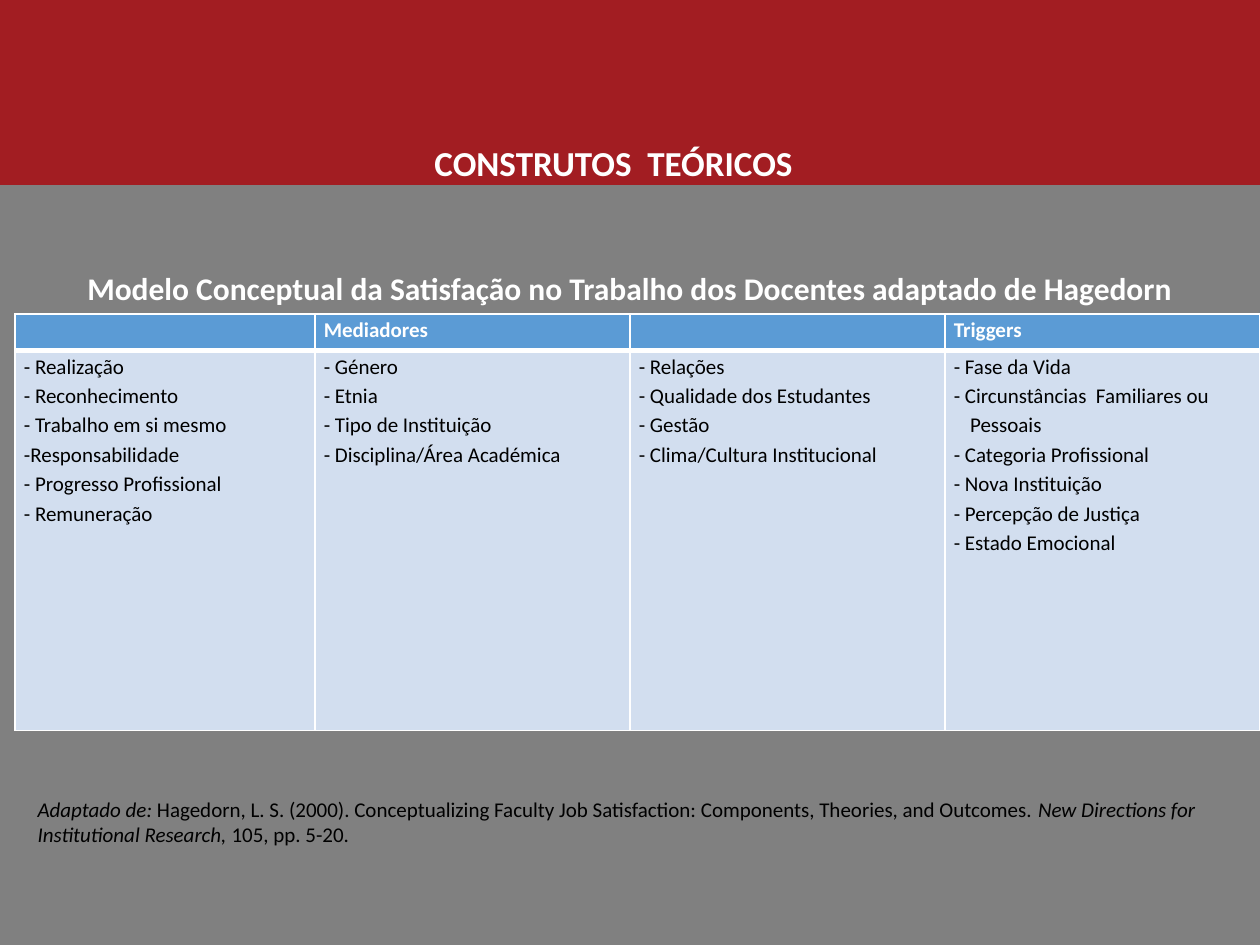
from lxml import etree
from pptx import Presentation
from pptx.dml.color import RGBColor
from pptx.enum.shapes import MSO_SHAPE
from pptx.enum.text import MSO_ANCHOR, PP_ALIGN
from pptx.oxml.ns import qn
from pptx.util import Inches, Pt

COLORS = {
    "red": "A21D22",
    "gray": "808080",
    "header": "5B9BD5",
    "body": "D2DEEF",
    "white": "FFFFFF",
    "black": "000000",
}


def style_font(font, size, color, bold=False, italic=False):
    font.name = "Calibri"
    font.size = Pt(size)
    font.bold = bold
    font.italic = italic
    font.color.rgb = RGBColor.from_string(COLORS[color])


def set_borders(cell, widths):
    properties = cell._tc.get_or_add_tcPr()
    for index, (side, width) in enumerate(widths.items()):
        line = etree.Element(qn(f"a:ln{side}"), w=str(Pt(width)))
        fill = etree.SubElement(line, qn("a:solidFill"))
        etree.SubElement(fill, qn("a:srgbClr"), val=COLORS["white"])
        properties.insert(index, line)


presentation = Presentation()
presentation.slide_width = Inches(10)
presentation.slide_height = Inches(7.5)
slide = presentation.slides.add_slide(presentation.slide_layouts[6])

bands = [(0, 1.47, "red"), (1.47, 5.67, "gray"), (7.06, 0.44, "gray")]
for top, height, color in bands:
    band = slide.shapes.add_shape(
        MSO_SHAPE.RECTANGLE, 0, Inches(top), Inches(10), Inches(height)
    )
    band.shadow.inherit = False
    band.fill.solid()
    band.fill.fore_color.rgb = RGBColor.from_string(COLORS[color])
    band.line.fill.background()

columns = [
    ("", 2.38, ["- Realização", "- Reconhecimento", "- Trabalho em si mesmo",
                "-Responsabilidade", "- Progresso Profissional", "- Remuneração"]),
    ("Mediadores", 2.5, ["- Género", "- Etnia", "- Tipo de Instituição",
                         "- Disciplina/Área Académica"]),
    ("", 2.5, ["- Relações", "- Qualidade dos Estudantes", "- Gestão",
               "- Clima/Cultura Institucional"]),
    ("Triggers", 2.5, ["- Fase da Vida", "- Circunstâncias  Familiares ou Pessoais",
                       "- Categoria Profissional", "- Nova Instituição",
                       "- Percepção de Justiça", "- Estado Emocional"]),
]
table = slide.shapes.add_table(
    2, len(columns), Inches(0.12), Inches(2.49), Inches(9.88), Inches(3.31)
).table
table.rows[0].height = Inches(0.29)
table.rows[1].height = Inches(3.02)

for column_index, (heading, width, items) in enumerate(columns):
    table.columns[column_index].width = Inches(width)
    for row_index, text in enumerate([heading, "\n".join(items)]):
        is_header = row_index == 0
        cell = table.cell(row_index, column_index)
        cell.margin_left = cell.margin_right = Inches(0.07)
        cell.margin_top = cell.margin_bottom = 0
        cell.fill.solid()
        cell.fill.fore_color.rgb = RGBColor.from_string(
            COLORS["header" if is_header else "body"]
        )
        set_borders(cell, {"L": 1, "R": 1, "T": 1 if is_header else 3,
                           "B": 3 if is_header else 1})
        cell.text_frame.text = text
        for paragraph in cell.text_frame.paragraphs:
            paragraph.line_spacing = 1.15
            if is_header:
                paragraph.alignment = PP_ALIGN.JUSTIFY
            else:
                properties = paragraph._p.get_or_add_pPr()
                properties.set("marL", str(Inches(0.13)))
                properties.set("indent", str(-Inches(0.13)))
            for run in paragraph.runs:
                style_font(run.font, 12, "white" if is_header else "black", is_header)
            if not paragraph.runs:
                etree.SubElement(paragraph._p, qn("a:endParaRPr"), sz="1200")

subtitle = slide.shapes.add_textbox(Inches(0.12), Inches(1.78), Inches(9.76), Inches(1.01))
subtitle.text_frame.word_wrap = True
subtitle.text_frame.vertical_anchor = MSO_ANCHOR.MIDDLE
subtitle.text_frame.text = (
    "Modelo Conceptual da Satisfação no Trabalho dos Docentes adaptado de Hagedorn"
)
paragraph = subtitle.text_frame.paragraphs[0]
paragraph.alignment = PP_ALIGN.CENTER
style_font(paragraph.runs[0].font, 18, "white", bold=True)

citation = slide.shapes.add_textbox(Inches(0.2), Inches(6.27), Inches(9.53), Inches(0.71))
citation.text_frame.word_wrap = True
citation_parts = [
    ("Adaptado de:", True),
    (" Hagedorn, L. S. (2000). Conceptualizing Faculty Job Satisfaction: "
     "Components, Theories, and Outcomes. ", False),
    ("New Directions for Institutional Research,", True),
    (" 105, pp. 5-20.", False),
]
for text, italic in citation_parts:
    run = citation.text_frame.paragraphs[0].add_run()
    run.text = text
    style_font(run.font, 12, "black", italic=italic)

title = slide.shapes.add_textbox(Inches(3.35), Inches(1.07), Inches(3.07), Inches(0.44))
title.text_frame.word_wrap = False
title.text_frame.text = "CONSTRUTOS  TEÓRICOS"
style_font(title.text_frame.paragraphs[0].runs[0].font, 20, "white", bold=True)

presentation.save("out.pptx")
